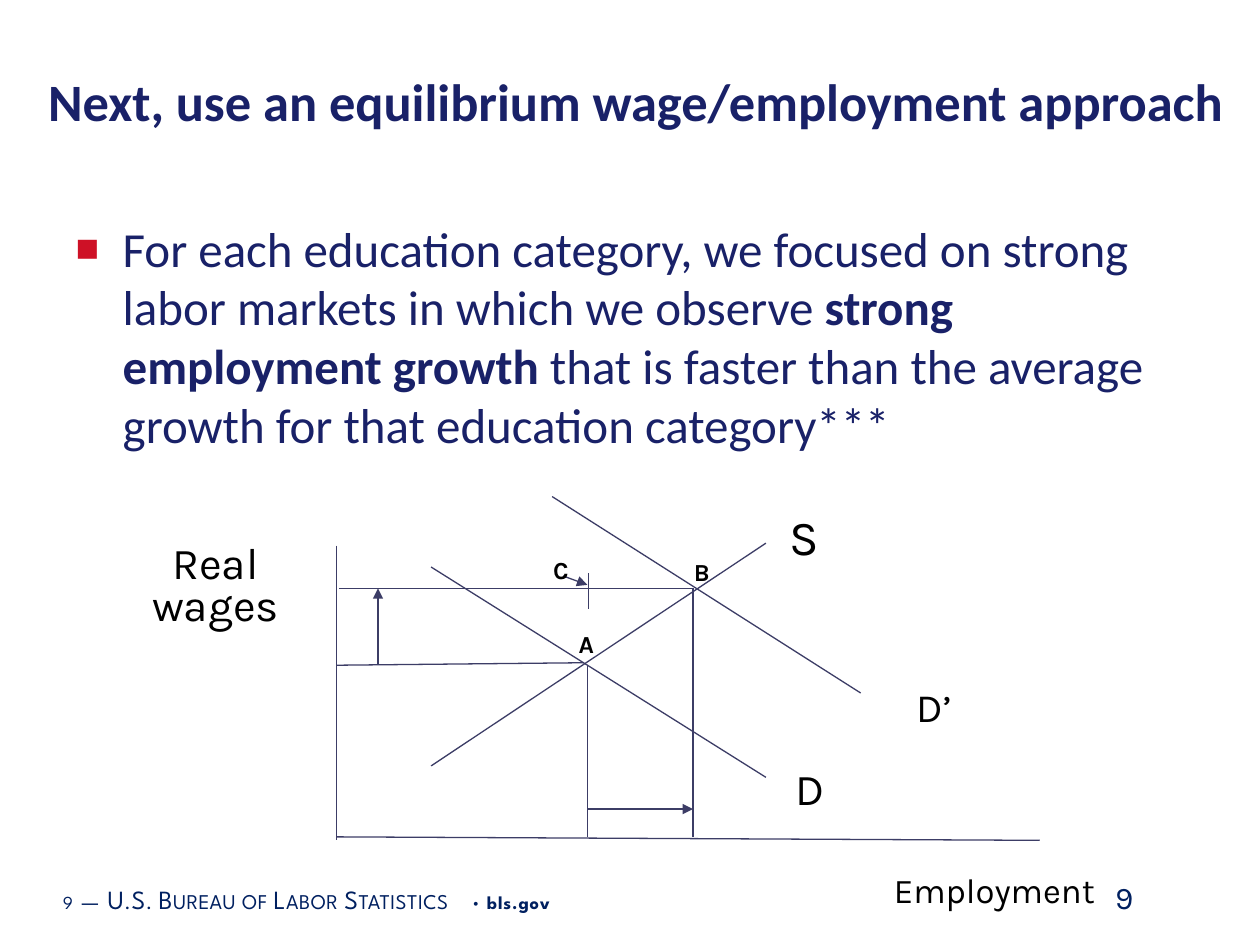
"""Build the slide on the equilibrium wage and employment approach."""
from dataclasses import dataclass

from lxml import etree
from pptx import Presentation
from pptx.dml.color import RGBColor
from pptx.enum.shapes import MSO_CONNECTOR
from pptx.enum.text import MSO_ANCHOR, MSO_AUTO_SIZE, PP_ALIGN
from pptx.oxml.ns import qn
from pptx.util import Cm, Pt

LINE = MSO_CONNECTOR.STRAIGHT
TOP, MIDDLE = MSO_ANCHOR.TOP, MSO_ANCHOR.MIDDLE
FIXED = MSO_AUTO_SIZE.NONE
LEFT, CENTER = PP_ALIGN.LEFT, PP_ALIGN.CENTER


@dataclass(frozen=True)
class Theme:
    head: str = "Calibri"
    plain: str = "Karla"
    foot: str = "League Spartan"
    navy: str = "192168"
    deep: str = "002060"
    black: str = "000000"
    red: str = "CE1126"
    stroke: str = "3C3D66"
    title: float = 30
    body: float = 28
    page: float = 18
    point: float = 14
    small: float = 10.5
    caps: float = 15
    gap: float = 16


theme = Theme()


def write(para, text, face, size, color, bold=False):
    run = para.add_run()
    run.text = text
    font = run.font
    font.name, font.size, font.bold = face, Pt(size), bold
    font.color.rgb = RGBColor.from_string(color)
    return run


def frame(shape, place, anchor):
    shape.left, shape.top, shape.width, shape.height = map(Cm, place)
    text = shape.text_frame
    text.word_wrap = True
    text.auto_size = FIXED
    text.vertical_anchor = anchor
    return text


deck = Presentation()
deck.slide_width, deck.slide_height = Cm(25.4), Cm(19.05)
slide = deck.slides.add_slide(deck.slide_layouts[1])
shapes = slide.shapes

text = frame(shapes.title, (0.25, 1.27, 25.15, 2.24), TOP)
para = text.paragraphs[0]
para.alignment = CENTER
write(para, "Next, use an equilibrium wage/employment approach",
      theme.head, theme.title, theme.navy, True)

text = frame(slide.placeholders[1], (1.27, 4.27, 22.86, 11.1), TOP)
para = text.paragraphs[0]
para.alignment = LEFT
para.space_before = Pt(0)
props = para._p.get_or_add_pPr()
props.set("marL", str(Cm(0.95)))
props.set("indent", str(Cm(-0.95)))
tint = etree.SubElement(props, qn("a:buClr"))
etree.SubElement(tint, qn("a:srgbClr"), val=theme.red)
etree.SubElement(props, qn("a:buSzPct"), val="80000")
etree.SubElement(props, qn("a:buChar"), char="■")
for words, bold in (
    ("For each education category, we focused on strong labor markets "
     "in which we observe ", False),
    ("strong employment growth", True),
    (" that is faster than the average growth for that education "
     "category***", False),
):
    write(para, words, theme.head, theme.body, theme.navy, bold)

place = (1.09, 17.6, 16.08, 1.02)
text = frame(shapes.add_textbox(0, 0, 0, 0), place, MIDDLE)
text.margin_left = text.margin_right = Cm(0.18)
text.margin_top = text.margin_bottom = Cm(0.1)
para = text.paragraphs[0]
for words, size, space, caps, bold in (
    ("9", theme.small, 50, "none", False),
    (" ", theme.gap, 50, "none", False),
    ("—", theme.caps, 30, "small", False),
    (" ", theme.gap, 50, "none", False),
    ("U.S. Bureau of Labor Statistics", theme.caps, 30, "small", False),
    (" • ", theme.small, 50, "none", False),
    ("bls.gov", theme.small, 50, "none", True),
):
    run = write(para, words, theme.foot, size, theme.deep, bold)
    props = run._r.get_or_add_rPr()
    props.set("spc", str(space))
    props.set("cap", caps)

place = (22.23, 17.58, 1.9, 1.02)
text = frame(shapes.add_textbox(0, 0, 0, 0), place, TOP)
write(text.paragraphs[0], "9", theme.plain, theme.page, theme.deep)

axis, base = 6.78, 16.87
old, new = 11.84, 13.97
low, high = 13.41, 11.86
for start, end, arrow in (
    ((axis, 11), (axis, 16.94), False),
    ((axis, base), (20.96, 16.94), False),
    ((8.69, 11.43), (15.44, 15.67), False),
    ((8.69, 15.44), (15.44, 10.95), False),
    ((11.13, 10.01), (17.35, 13.97), False),
    ((old, low), (old, base), False),
    ((new, high), (new, base), False),
    ((new, high), (6.83, high), False),
    ((11.76, 13.36), (axis, low), False),
    ((high, 11.56), (high, 12.27), False),
    ((11.35, 11.61), (old, 11.79), True),
    ((7.62, 13.39), (7.62, high), True),
    ((old, 16.31), (new, 16.31), True),
):
    line = shapes.add_connector(LINE, *map(Cm, start + end))
    line.line.width = Pt(0.75)
    line.line.color.rgb = RGBColor.from_string(theme.stroke)
    if arrow:
        etree.SubElement(line.line._get_or_add_ln(), qn("a:tailEnd"),
                         type="triangle")
    etree.SubElement(line._element.spPr, qn("a:effectLst"))

for rows, place, size, pitch, bold in (
    (["D"], (15.39, 15.39, 1.9, 1.19), 25.2, 0.8, False),
    (["D’"], (17.78, 13.54, 2.11, 1.4), 23, 1, False),
    (["S"], (14.63, 10.29, 3.18, 1.27), 27.9, 0.8, False),
    (["Employment"], (16.97, 17.53, 6.15, 0.97), 19.8, 0.8, False),
    (["Real", "wages"], (2.34, 10.8, 4.01, 2.11), 25.2, 0.8, False),
    (["B"], (13.74, 11.28, 0.64, 0.51), theme.point, 1, True),
    (["A"], (11.4, 12.73, 0.84, 0.51), theme.point, 1, True),
    (["C"], (10.9, 11.28, 0.58, 0.41), theme.point, 1, True),
):
    text = frame(shapes.add_textbox(0, 0, 0, 0), place, MIDDLE)
    for i, row in enumerate(rows):
        para = text.add_paragraph() if i else text.paragraphs[0]
        para.alignment = CENTER
        para.line_spacing = float(pitch)
        write(para, row, theme.plain, size, theme.black, bold)

deck.save("out.pptx")
